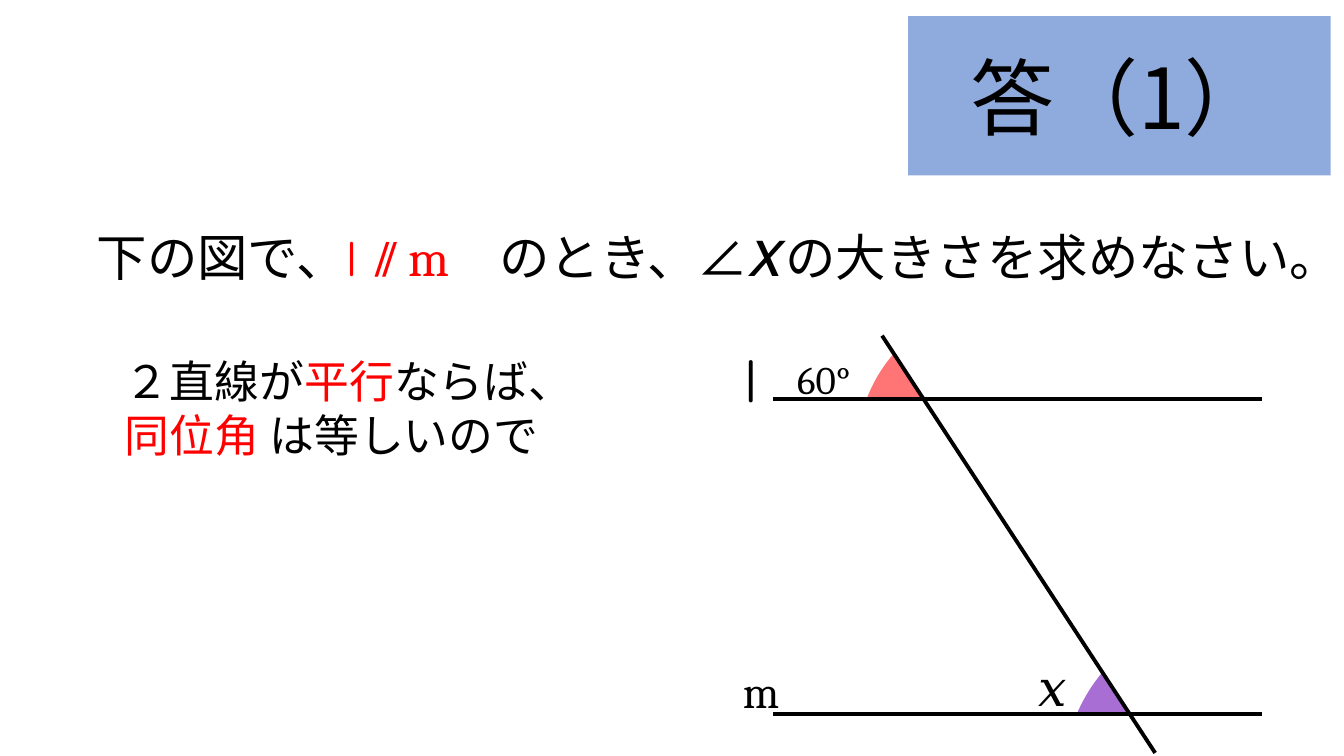
from dataclasses import dataclass

from lxml import etree
from pptx import Presentation
from pptx import util as u
from pptx.dml import color
from pptx.enum import shapes, text
from pptx.oxml import ns

COLOURS = {
    "ink": "000000",
    "key": "FF0000",
    "banner": "8FAADC",
    "known": "FF7575",
    "unknown": "A86ED4",
}
SERIF, ROUND, SANS = "Cambria", "Comic Neue", "Noto Sans CJK JP"
WIDTH, HEIGHT = u.Inches(13.33), u.Inches(7.5)

# Line positions, in percent of the slide's width or height
LINE_LEFT, LINE_RIGHT = 57.53, 93.9
LINE_L, LINE_M = 52.8, 94.4


@dataclass(frozen=True)
class Box:
    """Left, top, width and height in percent of the slide."""
    left: float
    top: float
    width: float
    height: float


@dataclass(frozen=True)
class Run:
    words: str
    size: float
    font: str = SERIF
    colour: str = "ink"


@dataclass(frozen=True)
class Label:
    box: Box
    paragraphs: tuple[tuple[Run, ...], ...]
    anchor: text.MSO_ANCHOR = text.MSO_ANCHOR.TOP


@dataclass(frozen=True)
class Angle:
    box: Box
    colour: str


@dataclass(frozen=True)
class Line:
    start: tuple[float, float]
    end: tuple[float, float]


QUESTION = Label(Box(2.7, 26.93, 95.1, 12.13), ((
    Run("　下の図で、", 36),
    Run("l ", 36, ROUND, "key"),
    Run("⫽ m　", 36, colour="key"),
    Run("のとき、∠", 36),
    Run("𝑥", 48),
    Run("の大きさを求めなさい。", 36),
),), text.MSO_ANCHOR.MIDDLE)

REASON = Label(Box(8.55, 46.13, 33.83, 15.73), (
    (Run("２直線が", 32), Run("平行", 32, colour="key"), Run("ならば、", 32)),
    (Run("同位角", 32, colour="key"), Run(" は等しいので", 32)),
))

FIGURE_LABELS = (
    Label(Box(58.58, 46.4, 10.05, 7.6), ((Run("60°", 28),),)),
    Label(Box(76.5, 86.13, 3.9, 9.47), ((Run("𝑥", 36),),)),
    Label(Box(54.68, 44.4, 3.68, 11.2), ((Run("l", 44, ROUND),),)),
    Label(Box(54.53, 87.07, 6, 8.53), ((Run("m", 32),),)),
)

ANGLES = (
    Angle(Box(80.55, 82.93, 6.83, 23.07), "unknown"),
    Angle(Box(64.95, 41.07, 7.35, 23.07), "known"),
)
ANGLE_TURN, ANGLE_SWEEP = 32.7, (88.37, 122.24)

LINES = (
    Line((LINE_LEFT, LINE_L), (LINE_RIGHT, LINE_L)),
    Line((LINE_LEFT, LINE_M), (LINE_RIGHT, LINE_M)),
    Line((65.63, 44.4), (85.95, 99.6)),
)

ANSWER_BOX = Box(67.58, 2.13, 31.43, 21.07)
ANSWER = ((Run("答（1）", 60, SANS),),)


def across(share: float) -> int:
    return round(WIDTH * share / 100)


def down(share: float) -> int:
    return round(HEIGHT * share / 100)


def place(box: Box) -> tuple[int, int, int, int]:
    return across(box.left), down(box.top), across(box.width), down(box.height)


def rgb(name: str) -> color.RGBColor:
    return color.RGBColor.from_string(COLOURS[name])


def apply(target, formats: dict) -> None:
    for name, value in formats.items():
        setattr(target, name, value)


def write(frame, paragraphs: tuple[tuple[Run, ...], ...], formats: dict) -> None:
    apply(frame, formats)
    for index, runs in enumerate(paragraphs):
        paragraph = frame.paragraphs[0] if index == 0 else frame.add_paragraph()
        for run in runs:
            piece = paragraph.add_run()
            piece.text = run.words
            apply(piece.font, {"size": u.Pt(run.size), "name": run.font})
            piece.font.color.rgb = rgb(run.colour)
            east_asian = etree.SubElement(piece.font._element, ns.qn("a:ea"))
            east_asian.set("typeface", SANS)


def draw_label(slide, label: Label) -> None:
    frame = slide.shapes.add_textbox(*place(label.box)).text_frame
    write(frame, label.paragraphs,
          {"word_wrap": True, "vertical_anchor": label.anchor})


def draw_filled(slide, kind: shapes.MSO_SHAPE, box: Box, colour: str):
    shape = slide.shapes.add_shape(kind, *place(box))
    shape.shadow.inherit = False
    shape.fill.solid()
    shape.fill.fore_color.rgb = rgb(colour)
    shape.line.fill.background()
    return shape


def draw_angle(slide, angle: Angle) -> None:
    sector = draw_filled(slide, shapes.MSO_SHAPE.PIE, angle.box, angle.colour)
    sector.rotation = ANGLE_TURN
    for index, limit in enumerate(ANGLE_SWEEP):
        sector.adjustments[index] = limit


def draw_line(group, line: Line) -> None:
    (x1, y1), (x2, y2) = line.start, line.end
    stroke = group.shapes.add_connector(
        shapes.MSO_CONNECTOR.STRAIGHT, across(x1), down(y1), across(x2), down(y2))
    stroke.line.width = u.Pt(2.75)
    stroke.line.color.rgb = rgb("ink")
    etree.SubElement(stroke._element.spPr, ns.qn("a:effectLst"))


def main() -> None:
    deck = Presentation()
    apply(deck, {"slide_width": WIDTH, "slide_height": HEIGHT})
    slide = deck.slides.add_slide(deck.slide_layouts[6])

    # Question and reasoning
    draw_label(slide, QUESTION)
    draw_label(slide, REASON)

    # Parallel lines, transversal and marked angles
    for angle in ANGLES:
        draw_angle(slide, angle)
    figure = slide.shapes.add_group_shape()
    for line in LINES:
        draw_line(figure, line)
    for label in FIGURE_LABELS:
        draw_label(slide, label)

    # Answer banner
    banner = draw_filled(slide, shapes.MSO_SHAPE.RECTANGLE, ANSWER_BOX, "banner")
    write(banner.text_frame, ANSWER,
          {"word_wrap": False, "vertical_anchor": text.MSO_ANCHOR.MIDDLE})
    banner.text_frame.paragraphs[0].alignment = text.PP_ALIGN.CENTER

    deck.save("out.pptx")


if __name__ == "__main__":
    main()
